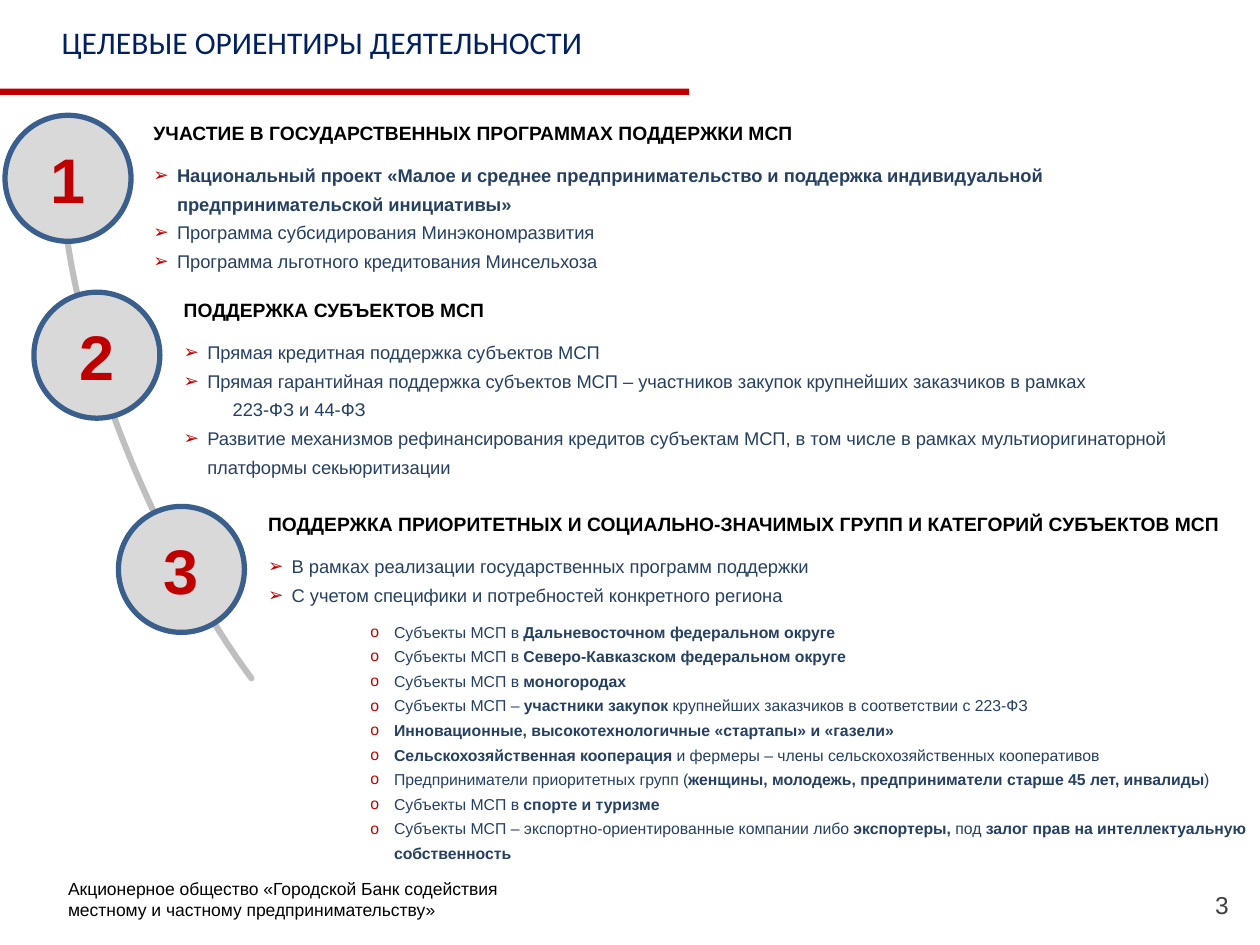
from dataclasses import dataclass

from lxml import etree
from pptx import Presentation
from pptx.dml.color import RGBColor
from pptx.enum.shapes import MSO_SHAPE as SHAPE
from pptx.enum.text import MSO_ANCHOR as ANCHOR, MSO_AUTO_SIZE as FIT, PP_ALIGN as ALIGN
from pptx.oxml.ns import qn
from pptx.util import Pt


@dataclass(frozen=True)
class Theme:
    font: str = "Arial"
    title_font: str = "Calibri"
    navy: str = "002060"
    red: str = "C00000"
    blue: str = "254061"
    ring: str = "3A5F8C"
    disc: str = "D9D9D9"
    arc: str = "BFBFBF"
    gray: str = "404040"
    black: str = "000000"
    title_size: float = 18
    number_size: float = 36
    heading_size: float = 11
    item_size: float = 10.5
    detail_size: float = 9
    footer_size: float = 10
    page_size: float = 14


T = Theme()
CIRCLE = 72
HANG = 13.5

# Items are (level, text); ** switches bold on and off
ARROW, CONTINUED, DETAIL = range(3)

# Circle left, top; text left, width, height; heading; items
SECTIONS = [
    (2.9, 65.9, 79.2, 615.6, 94.3, "УЧАСТИЕ В ГОСУДАРСТВЕННЫХ ПРОГРАММАХ ПОДДЕРЖКИ МСП", [
        (ARROW, "**Национальный проект «Малое и среднее предпринимательство и поддержка "
                "индивидуальной предпринимательской инициативы»**"),
        (ARROW, "Программа субсидирования Минэкономразвития"),
        (ARROW, "Программа льготного кредитования Минсельхоза"),
    ]),
    (19.4, 167, 96.5, 599.8, 110.9, "ПОДДЕРЖКА СУБЪЕКТОВ МСП", [
        (ARROW, "Прямая кредитная поддержка субъектов МСП"),
        (ARROW, "Прямая гарантийная поддержка субъектов МСП – участников закупок "
                "крупнейших заказчиков в рамках"),
        (CONTINUED, "223-ФЗ и 44-ФЗ"),
        (ARROW, "Развитие механизмов рефинансирования кредитов субъектам МСП, в том числе "
                "в рамках мультиоригинаторной платформы секьюритизации"),
    ]),
    (67.7, 289.4, 144.7, 578.2, 223.2,
     "ПОДДЕРЖКА ПРИОРИТЕТНЫХ И СОЦИАЛЬНО-ЗНАЧИМЫХ ГРУПП И КАТЕГОРИЙ СУБЪЕКТОВ МСП", [
         (ARROW, "В рамках реализации государственных программ поддержки"),
         (ARROW, "С учетом специфики и потребностей конкретного региона"),
         (DETAIL, "Субъекты МСП в **Дальневосточном федеральном округе**"),
         (DETAIL, "Субъекты МСП в **Северо-Кавказском федеральном округе**"),
         (DETAIL, "Субъекты МСП в **моногородах**"),
         (DETAIL, "Субъекты МСП – **участники закупок **крупнейших заказчиков "
                  "в соответствии с 223-ФЗ"),
         (DETAIL, "**Инновационные, высокотехнологичные «стартапы» и «газели»**"),
         (DETAIL, "**Сельскохозяйственная кооперация **и фермеры – члены "
                  "сельскохозяйственных кооперативов"),
         (DETAIL, "Предприниматели приоритетных групп (**женщины, молодежь, "
                  "предприниматели старше 45 лет, инвалиды**)"),
         (DETAIL, "Субъекты МСП в **спорте и туризме**"),
         (DETAIL, "Субъекты МСП – экспортно-ориентированные компании либо **экспортеры, **"
                  "под **залог прав на интеллектуальную собственность**"),
     ]),
]


def rgb(value):
    return RGBColor.from_string(value)


def style_run(r, size, color, bold=False, font=T.font):
    r.font.size, r.font.bold, r.font.name = Pt(size), bold, font
    r.font.color.rgb = rgb(color)


def add_shape(slide, kind, box, fill=None, line=None, width=0):
    sp = slide.shapes.add_shape(kind, *map(Pt, box))
    sp.shadow.inherit = False
    if fill:
        sp.fill.solid()
        sp.fill.fore_color.rgb = rgb(fill)
    else:
        sp.fill.background()
    if line:
        sp.line.color.rgb = rgb(line)
        sp.line.width = Pt(width)
    else:
        sp.line.fill.background()
    return sp


def add_text_box(slide, box, insets=(7.2, 3.6, 7.2, 3.6), wrap=True):
    tf = slide.shapes.add_textbox(*map(Pt, box)).text_frame
    tf.margin_left, tf.margin_top, tf.margin_right, tf.margin_bottom = map(Pt, insets)
    tf.word_wrap = wrap
    return tf


def set_text(tf, text, size, color, bold=False, font=T.font, align=ALIGN.LEFT):
    tf.text = text
    p = tf.paragraphs[0]
    p.alignment = align
    style_run(p.runs[0], size, color, bold, font)
    return p


def set_indent(p, left, hang=0, bullet=None):
    ppr = p._p.get_or_add_pPr()
    ppr.set("marL", str(Pt(left)))
    ppr.set("indent", str(Pt(-hang)))
    if bullet:
        color = etree.SubElement(ppr, qn("a:buClr"))
        etree.SubElement(color, qn("a:srgbClr"), val=T.red)
        etree.SubElement(ppr, qn("a:buFont"), typeface=T.font)
        etree.SubElement(ppr, qn("a:buChar"), char=bullet)


def add_item(tf, level, text, gap):
    p = tf.add_paragraph()
    if level == ARROW:
        set_indent(p, HANG, HANG, "➢")
    elif level == CONTINUED:
        set_indent(p, 28)
    else:
        set_indent(p, 72, HANG, "o")
    p.line_spacing = 1.3
    p.space_before = Pt(gap)
    size = T.detail_size if level == DETAIL else T.item_size
    for i, part in enumerate(text.split("**")):
        if part:
            r = p.add_run()
            r.text = part
            style_run(r, size, T.blue, bold=i % 2 == 1)


def add_circle(slide, number, left, top):
    sp = add_shape(slide, SHAPE.OVAL, (left, top, CIRCLE, CIRCLE), T.disc, T.ring, 3)
    sp.text_frame.vertical_anchor = ANCHOR.MIDDLE
    set_text(sp.text_frame, str(number), T.number_size, T.red, True, align=ALIGN.CENTER)


def add_section(slide, box, heading, items):
    tf = add_text_box(slide, box, (8.5, 3.6, 7.2, 3.6))
    tf.auto_size = FIT.SHAPE_TO_FIT_TEXT
    set_text(tf, heading, T.heading_size, T.black, True)
    previous = None
    for level, text in items:
        # A gap opens the list and the detail level
        gap = 7.5 if previous is None else 6 if level == DETAIL != previous else 0
        add_item(tf, level, text, gap)
        previous = level


def main():
    prs = Presentation()
    prs.slide_width, prs.slide_height = Pt(720), Pt(540)
    s = prs.slides.add_slide(prs.slide_layouts[6])

    # Footer and page number
    footer = add_text_box(s, (38.9, 501.8, 277.9, 40.3), (0, 0, 0, 0))
    set_text(footer, "Акционерное общество «Городской Банк содействия "
             "местному и частному предпринимательству»", T.footer_size, T.black)
    page = add_text_box(s, (541.4, 502.6, 167.8, 28.8))
    page.vertical_anchor = ANCHOR.MIDDLE
    set_text(page, "3", T.page_size, T.gray, align=ALIGN.RIGHT)

    # Arc linking the circles: start angle, end angle, thickness
    arc = add_shape(s, SHAPE.BLOCK_ARC, (74.9, 15.8, 158.4, 462.2), line=T.arc, width=3.5)
    arc.rotation = 156
    for i, value in enumerate((178.95, 43.95, 0)):
        arc.adjustments[i] = value

    # Title and rule
    title = add_text_box(s, (28.1, 13.7, 324.7, 24.5), wrap=False)
    title.auto_size = FIT.SHAPE_TO_FIT_TEXT
    p = set_text(title, "ЦЕЛЕВЫЕ ОРИЕНТИРЫ ДЕЯТЕЛЬНОСТИ", T.title_size, T.navy,
                 font=T.title_font)
    p.line_spacing = 0.8
    add_shape(s, SHAPE.RECTANGLE, (0, 50.6, 393.8, 3.6), T.red)

    # Numbered sections
    for number, section in enumerate(SECTIONS, 1):
        x, y, left, width, height, heading, items = section
        add_circle(s, number, x, y)
        add_section(s, (left, y, width, height), heading, items)

    prs.save("out.pptx")


if __name__ == "__main__":
    main()
